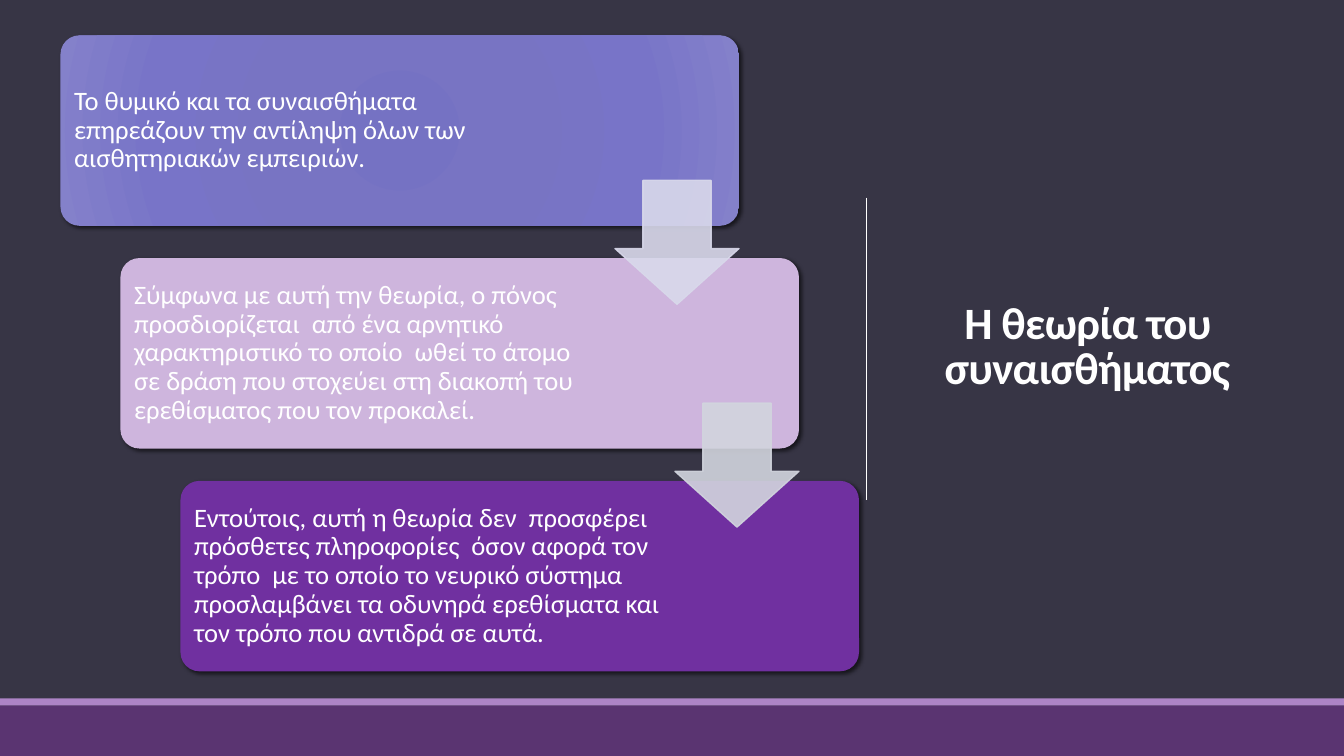
from lxml import etree
from pptx import Presentation
from pptx.dml.color import RGBColor
from pptx.enum.shapes import MSO_CONNECTOR, MSO_SHAPE
from pptx.enum.text import MSO_ANCHOR, MSO_AUTO_SIZE, PP_ALIGN
from pptx.oxml import parse_xml
from pptx.oxml.ns import nsdecls, qn
from pptx.util import Inches, Pt

RECT, ROUNDED = MSO_SHAPE.RECTANGLE, MSO_SHAPE.ROUNDED_RECTANGLE
DOWN_ARROW = MSO_SHAPE.DOWN_ARROW
STRAIGHT = MSO_CONNECTOR.STRAIGHT
MIDDLE, CENTER = MSO_ANCHOR.MIDDLE, PP_ALIGN.CENTER
NO_AUTOFIT = MSO_AUTO_SIZE.NONE

FONT, WHITE, BACKGROUND = "Calibri", "FFFFFF", "373545"
SLIDE_W, SLIDE_H = 13.33, 7.5
CARD_W, CARD_H = 6.73, 1.89
STEP_X, STEP_Y = 0.595, 2.21
ARROW_SIZE = 1.23

TITLE = "Η θεωρία του συναισθήματος"
# Text, fill (a list of stops is a radial gradient), text width
CARDS = [
    ("Το θυμικό και τα συναισθήματα επηρεάζουν την αντίληψη όλων των "
     "αισθητηριακών εμπειριών.",
     [(0, "7572C3"), (34, "7874C3"), (70, "7874C8"), (100, "8481CA")], 4.69),
    ("Σύμφωνα με αυτή την θεωρία, ο πόνος προσδιορίζεται  από ένα αρνητικό "
     "χαρακτηριστικό το οποίο  ωθεί το άτομο σε δράση που στοχεύει στη διακοπή "
     "του ερεθίσματος που τον προκαλεί.", "CEB5DD", 4.79),
    ("Εντούτοις, αυτή η θεωρία δεν  προσφέρει πρόσθετες πληροφορίες  όσον αφορά "
     "τον τρόπο  με το οποίο το νευρικό σύστημα  προσλαμβάνει τα οδυνηρά "
     "ερεθίσματα και τον τρόπο που αντιδρά σε αυτά.", "7030A0", 4.79),
]
ARROW_COLORS = ["D9D9EB", "D2D5DE"]


def rgb(value):
    return RGBColor.from_string(value)


def box_lengths(*box):
    return [Inches(length) for length in box]


def add_plain_shape(slide, preset, box, color):
    """Add a shape with a solid fill, no outline and no shadow."""
    shape = slide.shapes.add_shape(preset, *box_lengths(*box))
    shape.fill.solid()
    shape.fill.fore_color.rgb = rgb(color)
    shape.line.fill.background()
    shape.shadow.inherit = False
    return shape


def write_text(frame, text, size, spacing, bold=False):
    frame.word_wrap = True
    frame.auto_size = NO_AUTOFIT
    frame.vertical_anchor = MIDDLE
    paragraph = frame.paragraphs[0]
    paragraph.line_spacing = spacing
    run = paragraph.add_run()
    run.text = text
    run.font.name, run.font.size, run.font.bold = FONT, Pt(size), bold
    run.font.color.rgb = rgb(WHITE)
    return paragraph, run


def set_radial_gradient(shape, stops):
    properties = shape._element.spPr
    stop_xml = "".join(
        f'<a:gs pos="{position * 1000}"><a:srgbClr val="{color}"/></a:gs>'
        for position, color in stops)
    gradient = parse_xml(
        f'<a:gradFill {nsdecls("a")} rotWithShape="1"><a:gsLst>{stop_xml}</a:gsLst>'
        '<a:path path="circle"><a:fillToRect l="50000" t="50000" r="50000" '
        'b="50000"/></a:path></a:gradFill>')
    properties.replace(properties.find(qn("a:solidFill")), gradient)


def add_soft_shadow(shape):
    effects = shape._element.spPr.find(qn("a:effectLst"))
    effects.append(parse_xml(
        f'<a:outerShdw {nsdecls("a")} blurRad="{Pt(3)}" dist="{Pt(2)}" '
        'dir="2700000" algn="ctr" rotWithShape="0"><a:srgbClr val="000000">'
        '<a:alpha val="60000"/></a:srgbClr></a:outerShdw>'))


def add_card(slide, left, top, text, fill, text_width):
    stops = fill if isinstance(fill, list) else None
    card = add_plain_shape(slide, ROUNDED, (left, top, CARD_W, CARD_H),
                           stops[0][1] if stops else fill)
    card.adjustments[0] = 0.1
    if stops:
        set_radial_gradient(card, stops)
    add_soft_shadow(card)

    inset = 0.055
    label = slide.shapes.add_textbox(*box_lengths(
        left + inset, top + inset, text_width, CARD_H - 2 * inset))
    frame = label.text_frame
    frame.margin_left = frame.margin_right = Inches(0.08)
    frame.margin_top = frame.margin_bottom = Inches(0.08)
    write_text(frame, text, 19, 0.9)


def add_step_arrow(slide, left, top, color):
    arrow = add_plain_shape(slide, DOWN_ARROW,
                            (left, top, ARROW_SIZE, ARROW_SIZE), color)
    arrow.adjustments[0], arrow.adjustments[1] = 0.55, 0.45
    arrow.line.width = Pt(1)
    arrow.line.color.rgb = rgb(color)
    for color_node in arrow._element.spPr.iter(qn("a:srgbClr")):
        etree.SubElement(color_node, qn("a:alpha"), val="90000")


def add_staircase(slide, left, top):
    """Place the cards stepping down to the right, then the arrows over them."""
    corners = [(left + i * STEP_X, top + i * STEP_Y) for i in range(len(CARDS))]
    for corner, card in zip(corners, CARDS):
        add_card(slide, *corner, *card)
    for (x, y), color in zip(corners, ARROW_COLORS):
        add_step_arrow(slide, x + CARD_W - ARROW_SIZE, y + 1.44, color)


def add_title(slide, left, top, width, height):
    title = slide.shapes.title
    title.left, title.top, title.width, title.height = box_lengths(
        left, top, width, height)
    paragraph, run = write_text(title.text_frame, TITLE, 32, 0.85, bold=True)
    paragraph.alignment = CENTER
    run.font._element.set("spc", "-50")


def add_divider(slide, x, top, bottom):
    divider = slide.shapes.add_connector(STRAIGHT, *box_lengths(x, top, x, bottom))
    divider.line.color.rgb = rgb(WHITE)
    divider.line.width = Pt(0.5)
    etree.SubElement(divider._element.spPr, qn("a:effectLst"))


def add_footer(slide, top):
    stripe = 0.07
    add_plain_shape(slide, RECT, (0, top, SLIDE_W, stripe), "AD84C6")
    add_plain_shape(slide, RECT, (0, top + stripe, SLIDE_W, SLIDE_H - top - stripe),
                    "5A3471")


def main():
    deck = Presentation()
    deck.slide_width, deck.slide_height = box_lengths(SLIDE_W, SLIDE_H)
    slide = deck.slides.add_slide(deck.slide_layouts[5])
    slide.background.fill.solid()
    slide.background.fill.fore_color.rgb = rgb(BACKGROUND)
    add_title(slide, 8.94, 0.69, 3.69, 5.53)
    add_divider(slide, 8.59, 1.96, 4.96)
    add_footer(slide, 6.93)
    add_staircase(slide, 0.6, 0.35)
    deck.save("out.pptx")


if __name__ == "__main__":
    main()
